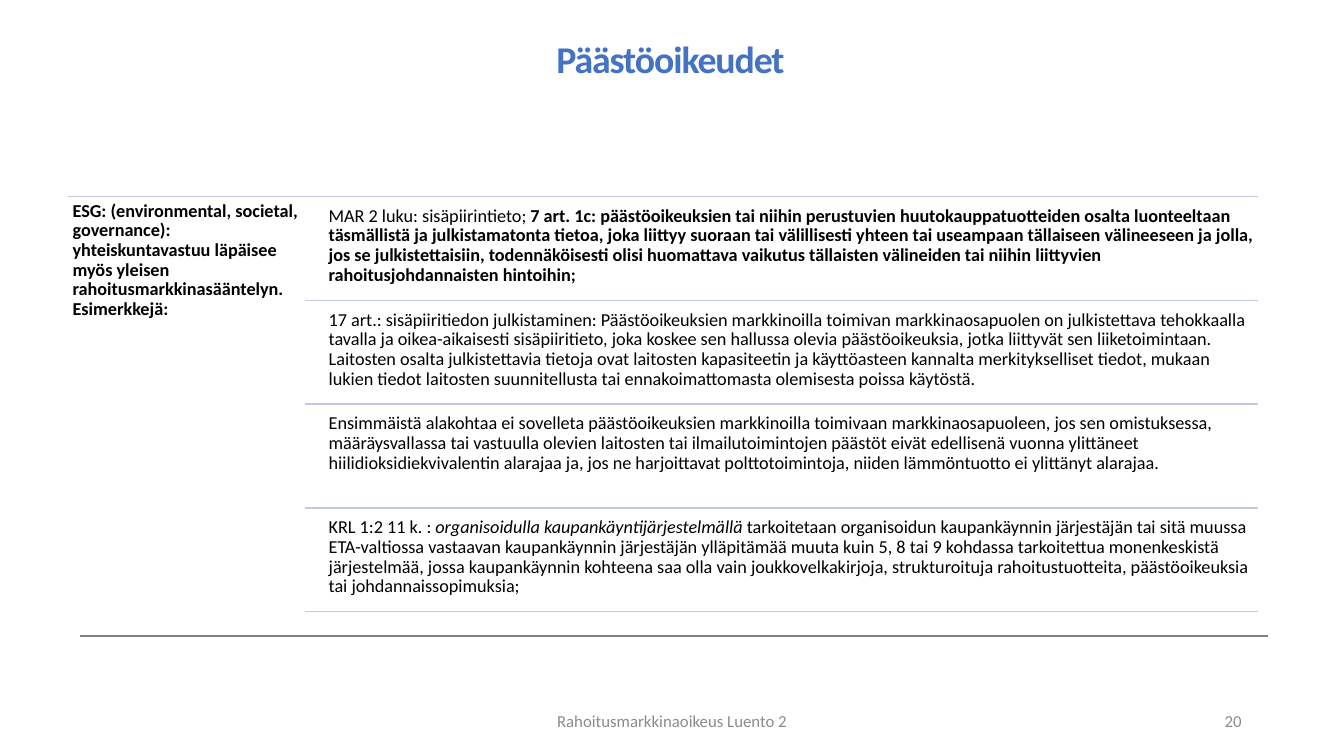
from dataclasses import dataclass

from lxml.etree import SubElement
from pptx import Presentation
from pptx.dml.color import RGBColor
from pptx.enum.shapes import MSO_CONNECTOR as Connector
from pptx.enum.text import MSO_ANCHOR as Anchor, MSO_AUTO_SIZE as AutoSize, PP_ALIGN as Align
from pptx.oxml.ns import qn
from pptx.util import Inches, Pt


@dataclass(frozen=True)
class Theme:
    font: str = "Calibri"
    accent: str = "4472C4"
    ink: str = "000000"
    muted: str = "8C8C8C"
    divider: str = "C1C9E4"
    baseline: str = "7F7F7F"
    title_size: float = 27
    body_size: float = 13
    footer_size: float = 12


class SlideBuilder:
    def __init__(self, deck, theme):
        self.deck = deck
        self.theme = theme
        self.page = deck.slides.add_slide(deck.slide_layouts[5])

    def across(self, percent):
        return round(self.deck.slide_width * percent / 100)

    def down(self, percent):
        return round(self.deck.slide_height * percent / 100)

    def area(self, left, top, width, height):
        return self.across(left), self.down(top), self.across(width), self.down(height)

    def fill_text(self, box, runs, size, color, align=Align.LEFT, anchor=Anchor.TOP,
                  inset=0.05, line_spacing=None):
        frame = box.text_frame
        frame.word_wrap = True
        frame.auto_size = AutoSize.NONE
        frame.vertical_anchor = anchor
        frame.margin_left = frame.margin_right = Inches(inset)
        frame.margin_top = frame.margin_bottom = Inches(inset)
        para = frame.paragraphs[0]
        para.alignment = align
        para.space_before = Pt(0)
        para.line_spacing = line_spacing
        for text, style in runs:
            span = para.add_run()
            span.text = text
            span.font.name = self.theme.font
            span.font.size = Pt(size)
            span.font.color.rgb = RGBColor.from_string(color)
            span.font.bold = style == "bold"
            span.font.italic = style == "italic"
        return para

    def title(self, text, area):
        box = self.page.shapes.title
        box.left, box.top, box.width, box.height = self.area(*area)
        para = self.fill_text(box, [(text, "bold")], self.theme.title_size, self.theme.accent,
                              Align.CENTER, inset=0, line_spacing=0.85)
        for span in para.runs:
            span.font._element.set("spc", "-80")

    def body(self, runs, area):
        box = self.page.shapes.add_textbox(*self.area(*area))
        self.fill_text(box, runs, self.theme.body_size, self.theme.ink, line_spacing=0.9)

    def footer(self, text, area, align):
        box = self.page.shapes.add_textbox(*self.area(*area))
        self.fill_text(box, [(text, "plain")], self.theme.footer_size, self.theme.muted,
                       align, Anchor.MIDDLE, inset=0.1)

    def rule(self, left, right, top, color, weight=1):
        line = self.page.shapes.add_connector(
            Connector.STRAIGHT, self.across(left), self.down(top),
            self.across(right), self.down(top))
        line.line.color.rgb = RGBColor.from_string(color)
        line.line.width = Pt(weight)
        SubElement(line._element.spPr, qn("a:effectLst"))


HEADING = ("ESG: (environmental, societal, governance): yhteiskuntavastuu läpäisee myös "
           "yleisen rahoitusmarkkinasääntelyn. Esimerkkejä:")

EXAMPLES = [
    [("MAR 2 luku: sisäpiirintieto; ", "plain"),
     ("7 art. 1c: päästöoikeuksien tai niihin perustuvien huutokauppatuotteiden osalta "
      "luonteeltaan täsmällistä ja julkistamatonta tietoa, joka liittyy suoraan tai "
      "välillisesti yhteen tai useampaan tällaiseen välineeseen ja jolla, jos se "
      "julkistettaisiin, todennäköisesti olisi huomattava vaikutus tällaisten välineiden "
      "tai niihin liittyvien rahoitusjohdannaisten hintoihin;", "bold")],
    [("17 art.: sisäpiiritiedon julkistaminen: Päästöoikeuksien markkinoilla toimivan "
      "markkinaosapuolen on julkistettava tehokkaalla tavalla ja oikea-aikaisesti "
      "sisäpiiritieto, joka koskee sen hallussa olevia päästöoikeuksia, jotka liittyvät "
      "sen liiketoimintaan. Laitosten osalta julkistettavia tietoja ovat laitosten "
      "kapasiteetin ja käyttöasteen kannalta merkitykselliset tiedot, mukaan lukien tiedot "
      "laitosten suunnitellusta tai ennakoimattomasta olemisesta poissa käytöstä.", "plain")],
    [("Ensimmäistä alakohtaa ei sovelleta päästöoikeuksien markkinoilla toimivaan "
      "markkinaosapuoleen, jos sen omistuksessa, määräysvallassa tai vastuulla olevien "
      "laitosten tai ilmailutoimintojen päästöt eivät edellisenä vuonna ylittäneet "
      "hiilidioksidiekvivalentin alarajaa ja, jos ne harjoittavat polttotoimintoja, niiden "
      "lämmöntuotto ei ylittänyt alarajaa.", "plain")],
    [("KRL 1:2 11 k. : ", "plain"),
     ("organisoidulla kaupankäyntijärjestelmällä", "italic"),
     (" tarkoitetaan organisoidun kaupankäynnin järjestäjän tai sitä muussa ETA-valtiossa "
      "vastaavan kaupankäynnin järjestäjän ylläpitämää muuta kuin 5, 8 tai 9 kohdassa "
      "tarkoitettua monenkeskistä järjestelmää, jossa kaupankäynnin kohteena saa olla vain "
      "joukkovelkakirjoja, strukturoituja rahoitustuotteita, päästöoikeuksia tai "
      "johdannaissopimuksia;", "plain")],
]

LEFT, RIGHT, TOP = 5.03, 93.62, 26
HEADING_WIDTH, ROW_HEIGHT = 17.7, 13.73
ROW_GAP, TEXT_INDENT = 0.67, 1.35


def main():
    deck = Presentation()
    deck.slide_width, deck.slide_height = Inches(13.33), Inches(7.5)
    theme = Theme()
    slide = SlideBuilder(deck, theme)

    slide.rule(5.93, 94.37, 84.13, theme.baseline, 0.75)
    slide.title("Päästöoikeudet ", (5.93, 5.6, 88.45, 17.47))

    slide.rule(LEFT, RIGHT, TOP, theme.divider)
    slide.body([(HEADING, "bold")], (LEFT, TOP, HEADING_WIDTH, ROW_HEIGHT * len(EXAMPLES)))
    divider_left = LEFT + HEADING_WIDTH
    text_left = divider_left + TEXT_INDENT
    for row, runs in enumerate(EXAMPLES):
        top = TOP + row * ROW_HEIGHT
        slide.body(runs, (text_left, top + ROW_GAP, RIGHT - text_left, ROW_HEIGHT - ROW_GAP))
        slide.rule(divider_left, RIGHT, top + ROW_HEIGHT, theme.divider)

    slide.footer("Rahoitusmarkkinaoikeus Luento 2", (33.13, 92.7, 33.75, 5.33), Align.CENTER)
    slide.footer("20", (70.63, 92.7, 22.5, 5.33), Align.RIGHT)
    deck.save("out.pptx")


if __name__ == "__main__":
    main()
